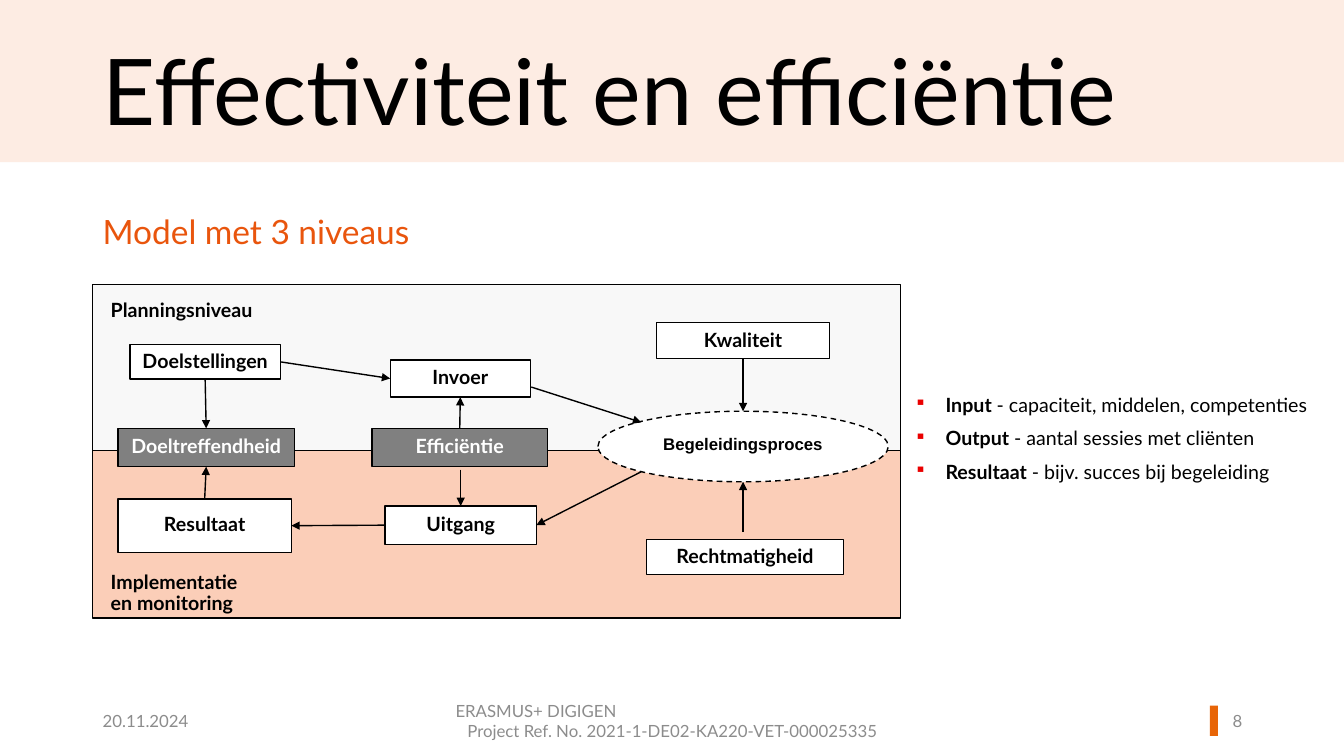
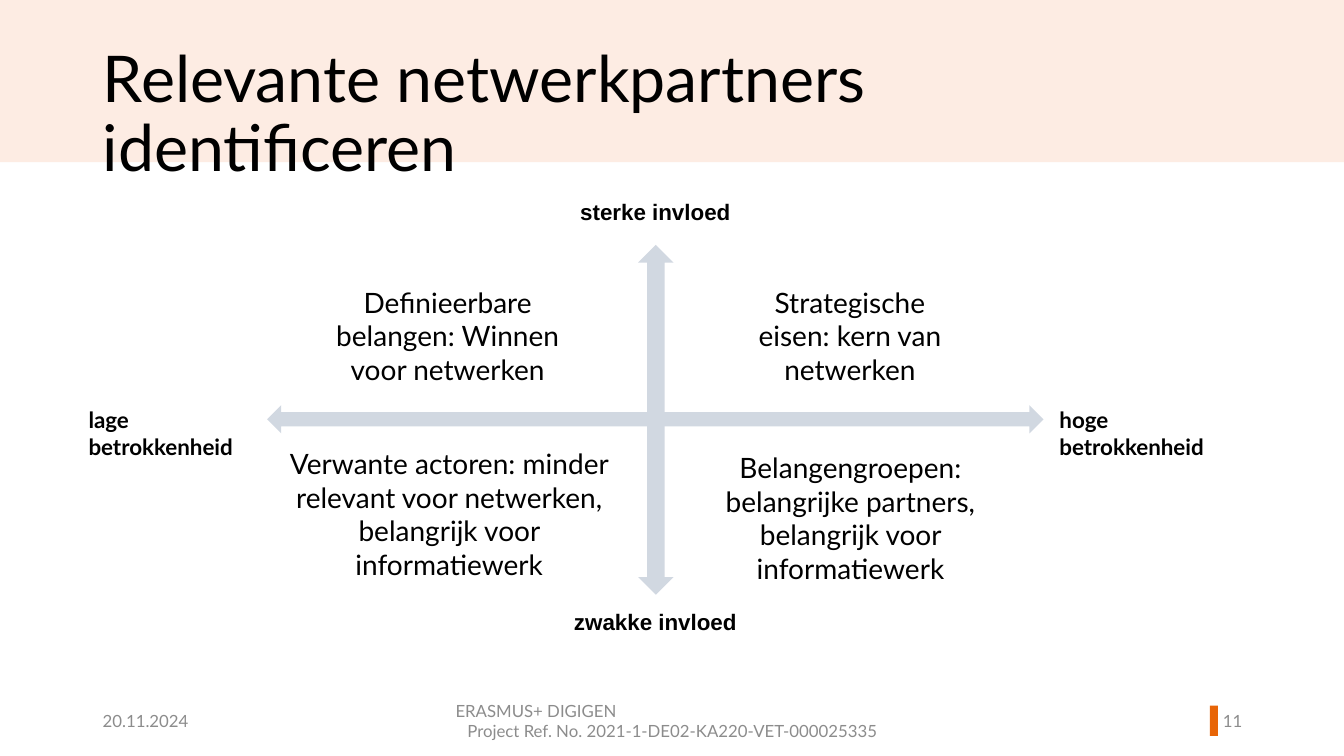
from lxml import etree
from pptx import Presentation
from pptx.dml.color import RGBColor
from pptx.enum import dml, shapes, text
from pptx.oxml import ns
from pptx.util import Inches, Pt

FONT, LABEL_FONT = "Lato", "Arial"
BLACK, WHITE, GREY, FOOTER = "000000", "FFFFFF", "808080", "8C8C8C"
BAND, MARK, HEADING, BULLET = "FDECE3", "E86507", "E9550D", "EA0000"
PLANNING, MONITORING, ARROW = "F8F8F8", "FBCEB8", "D1D8E1"
LEFT, CENTER, RIGHT = text.PP_ALIGN.LEFT, text.PP_ALIGN.CENTER, text.PP_ALIGN.RIGHT
TOP, MIDDLE = text.MSO_ANCHOR.TOP, text.MSO_ANCHOR.MIDDLE
RECT, OVAL = shapes.MSO_SHAPE.RECTANGLE, shapes.MSO_SHAPE.OVAL
MARGIN = 0.92


def colour(hex_value):
    """Turn a hex string into a colour."""
    return RGBColor.from_string(hex_value)


def inches(*lengths):
    """Turn numbers into lengths."""
    return [Inches(length) for length in lengths]


def add_span(para, words, size, color=BLACK, bold=False, font=FONT):
    """Add one run of formatted text to a paragraph."""
    span = para.add_run()
    span.text = words
    span.font.name, span.font.size, span.font.bold = font, Pt(size), bold
    span.font.color.rgb = colour(color)


def write(frame, lines, size, aligns=(LEFT,), anchor=TOP, spacing=1.0, wrap=True, **style):
    """Fill a text frame with one paragraph per line."""
    frame.word_wrap, frame.vertical_anchor = wrap, anchor
    frame.auto_size = text.MSO_AUTO_SIZE.NONE
    for index, line in enumerate(lines):
        para = frame.paragraphs[0] if index == 0 else frame.add_paragraph()
        para.alignment = aligns[index % len(aligns)]
        para.line_spacing = spacing
        add_span(para, line, size, **style)


def add_text(page, box, lines, size, **style):
    """Add a text box with the given lines."""
    write(page.shapes.add_textbox(*inches(*box)).text_frame, lines, size, **style)


def add_block(page, kind, box, fill, outline=None):
    """Add a flat preset shape, with a thin outline if one is given."""
    block = page.shapes.add_shape(kind, *inches(*box))
    block.shadow.inherit = False
    block.fill.solid()
    block.fill.fore_color.rgb = colour(fill)
    if outline:
        block.line.color.rgb = colour(outline)
        block.line.width = Pt(1)
    else:
        block.line.fill.background()
    return block


def add_arrow(page, start, end):
    """Draw an arrow whose ends are points or sides of shapes."""
    arrow = page.shapes.add_connector(shapes.MSO_CONNECTOR.STRAIGHT, *inches(0, 0, 0, 0))
    if isinstance(start[0], float):
        arrow.begin_x, arrow.begin_y = inches(*start)
    else:
        arrow.begin_connect(*start)
    if isinstance(end[0], float):
        arrow.end_x, arrow.end_y = inches(*end)
    else:
        arrow.end_connect(*end)
    arrow.line.color.rgb = colour(BLACK)
    arrow.line.width = Pt(1)
    etree.SubElement(arrow.line._get_or_add_ln(), ns.qn("a:tailEnd"), type="triangle")
    etree.SubElement(arrow._element.spPr, ns.qn("a:effectLst"))


def add_page(deck, title, size, title_width, number):
    """Add a page with its band, title and footer."""
    page = deck.slides.add_slide(deck.slide_layouts[5])
    band = add_block(page, RECT, (0, 0, 13.33, 1.61), BAND)
    heading = page.shapes.title
    band._element.addnext(heading._element)
    heading.left, heading.top, heading.width, heading.height = inches(MARGIN, 0.41, title_width, 0.85)
    write(heading.text_frame, [title], size, spacing=0.9)
    add_block(page, RECT, (12, 7, 0.08, 0.3), MARK)
    project = ["ERASMUS+ DIGIGEN", "Project Ref. No. 2021-1-DE02-KA220-VET-000025335"]
    for left, width, lines, aligns in (
        (MARGIN, 3, ["20.11.2024"], (LEFT,)),
        (4.42, 4.5, project, (LEFT, CENTER)),
        (11.77, 0.65, [str(number)], (RIGHT,)),
    ):
        add_text(page, (left, 6.95, width, 0.4), lines, 12, aligns=aligns, anchor=MIDDLE, color=FOOTER)
    return page


def add_model(page, left, top):
    """Draw the two levels, their boxes and the arrows between them."""
    for offset, height, fill in ((0, 1.65, PLANNING), (1.65, 1.66, MONITORING)):
        add_block(page, RECT, (left, top + offset, 8.01, height), fill, BLACK)
    for offset, height, lines in (
        (0.11, 0.31, ["Planningsniveau"]),
        (2.81, 0.52, ["Implementatie", "en monitoring"]),
    ):
        add_text(page, (left + 0.08, top + offset, 2.43, height), lines, 14, bold=True, spacing=0.9)
    nodes = {}
    for name, x, y, width, height, fill in (
        ("Doeltreffendheid", 0.25, 1.43, 1.75, 0.38, GREY),
        ("Efficiëntie", 2.77, 1.43, 1.74, 0.38, GREY),
        ("Doelstellingen", 0.37, 0.6, 1.49, 0.34, WHITE),
        ("Invoer", 2.95, 0.75, 1.39, 0.37, WHITE),
        ("Uitgang", 2.9, 2.2, 1.5, 0.38, WHITE),
        ("Rechtmatigheid", 5.49, 2.53, 1.96, 0.35, WHITE),
        ("Kwaliteit", 5.59, 0.38, 1.72, 0.36, WHITE),
        ("Resultaat", 0.25, 2.13, 1.72, 0.53, WHITE),
    ):
        nodes[name] = add_block(page, RECT, (left + x, top + y, width, height), fill, BLACK)
        write(nodes[name].text_frame, [name], 14, aligns=(CENTER,), anchor=MIDDLE, spacing=0.9,
              wrap=False, bold=True, color=WHITE if fill == GREY else BLACK)
    process = add_block(page, OVAL, (left + 5.01, top + 1.26, 2.88, 0.7), WHITE, BLACK)
    process.line.dash_style = dml.MSO_LINE.DASH
    write(process.text_frame, ["Begeleidingsproces"], 12, aligns=(CENTER,), anchor=MIDDLE,
          spacing=0.7, wrap=False, bold=True, font=LABEL_FONT)
    nodes["Proces"] = process
    above, west, below, east = range(4)

    def locate(anchor, value):
        """Turn a named side or a relative point into an arrow end."""
        if anchor in nodes:
            return nodes[anchor], value
        return left + anchor, top + value

    for start, end in (
        (("Kwaliteit", below), ("Proces", above)),
        (("Doelstellingen", east), ("Invoer", west)),
        (("Uitgang", west), ("Resultaat", east)),
        (("Efficiëntie", above), ("Invoer", below)),
        (("Doelstellingen", below), ("Doeltreffendheid", above)),
        (("Resultaat", above), ("Doeltreffendheid", below)),
        ((3.65, 1.84), ("Uitgang", above)),
        ((5.44, 1.86), ("Uitgang", east)),
        ((4.35, 1.02), (5.44, 1.37)),
        ((6.45, 2.46), (6.45, 1.96)),
    ):
        add_arrow(page, locate(*start), locate(*end))


def add_terms(page, box):
    """List the terms of the model with square bullets."""
    frame = page.shapes.add_textbox(*inches(*box)).text_frame
    frame.word_wrap = True
    for index, (term, meaning) in enumerate((
        ("Input ", "- capaciteit, middelen, competenties"),
        ("Output ", "- aantal sessies met cliënten"),
        ("Resultaat ", "- bijv. succes bij begeleiding"),
    )):
        para = frame.add_paragraph() if index else frame.paragraphs[0]
        if index:
            para.space_before = Pt(7)
        props = para._p.get_or_add_pPr()
        props.set("marL", str(Inches(0.31)))
        props.set("indent", str(Inches(-0.31)))
        bullet_color = etree.SubElement(props, ns.qn("a:buClr"))
        etree.SubElement(bullet_color, ns.qn("a:srgbClr"), val=BULLET)
        etree.SubElement(props, ns.qn("a:buSzPct"), val="85000")
        etree.SubElement(props, ns.qn("a:buChar"), char="▪")
        add_span(para, term, 14, bold=True)
        add_span(para, meaning, 14)


def add_matrix(page, left, top):
    """Draw the crossed axes with their end labels and four quadrants."""
    for kind, box in (
        (shapes.MSO_SHAPE.UP_DOWN_ARROW, (left + 5.55, top + 0.6, 0.35, 3.47)),
        (shapes.MSO_SHAPE.LEFT_RIGHT_ARROW, (left + 1.87, top + 2.19, 7.7, 0.28)),
    ):
        add_block(page, kind, box, ARROW)
    for offset, label in ((0, "sterke invloed"), (4.07, "zwakke invloed")):
        add_text(page, (left + 4.64, top + offset, 2.16, 0.54), [label], 16,
                 aligns=(CENTER,), anchor=MIDDLE, bold=True, font=LABEL_FONT)
    for offset, degree in ((0, "lage"), (9.63, "hoge")):
        add_text(page, (left + offset, top + 2.15, 2.07, 0.64), [degree, "betrokkenheid"], 16, bold=True)
    for x, y, width, height, words in (
        (2.34, 0.95, 2.64, 1.11, "Definieerbare belangen: Winnen voor netwerken"),
        (6.6, 0.95, 2.1, 1.11, "Strategische eisen: kern van netwerken"),
        (1.97, 2.55, 3.41, 1.45,
         "Verwante actoren: minder relevant voor netwerken, belangrijk voor informatiewerk"),
        (5.83, 2.59, 3.65, 1.45,
         "Belangengroepen: belangrijke partners, belangrijk voor informatiewerk"),
    ):
        add_text(page, (left + x, top + y, width, height), [words], 20, aligns=(CENTER,))


def main():
    """Build and save the deck."""
    deck = Presentation()
    deck.slide_width, deck.slide_height = inches(13.33, 7.5)
    page = add_page(deck, "Effectiviteit en efficiëntie", 65.7, 10.32, 8)
    add_text(page, (MARGIN, 2.04, 10.1, 0.5), ["Model met 3 niveaus"], 23.9, color=HEADING)
    add_model(page, MARGIN, 2.82)
    add_terms(page, (8.97, 3.85, 4.36, 1.04))
    page = add_page(deck, "Relevante netwerkpartners identificeren", 46, 11.2, 11)
    add_matrix(page, 0.78, 1.83)
    deck.save("out.pptx")


if __name__ == "__main__":
    main()
